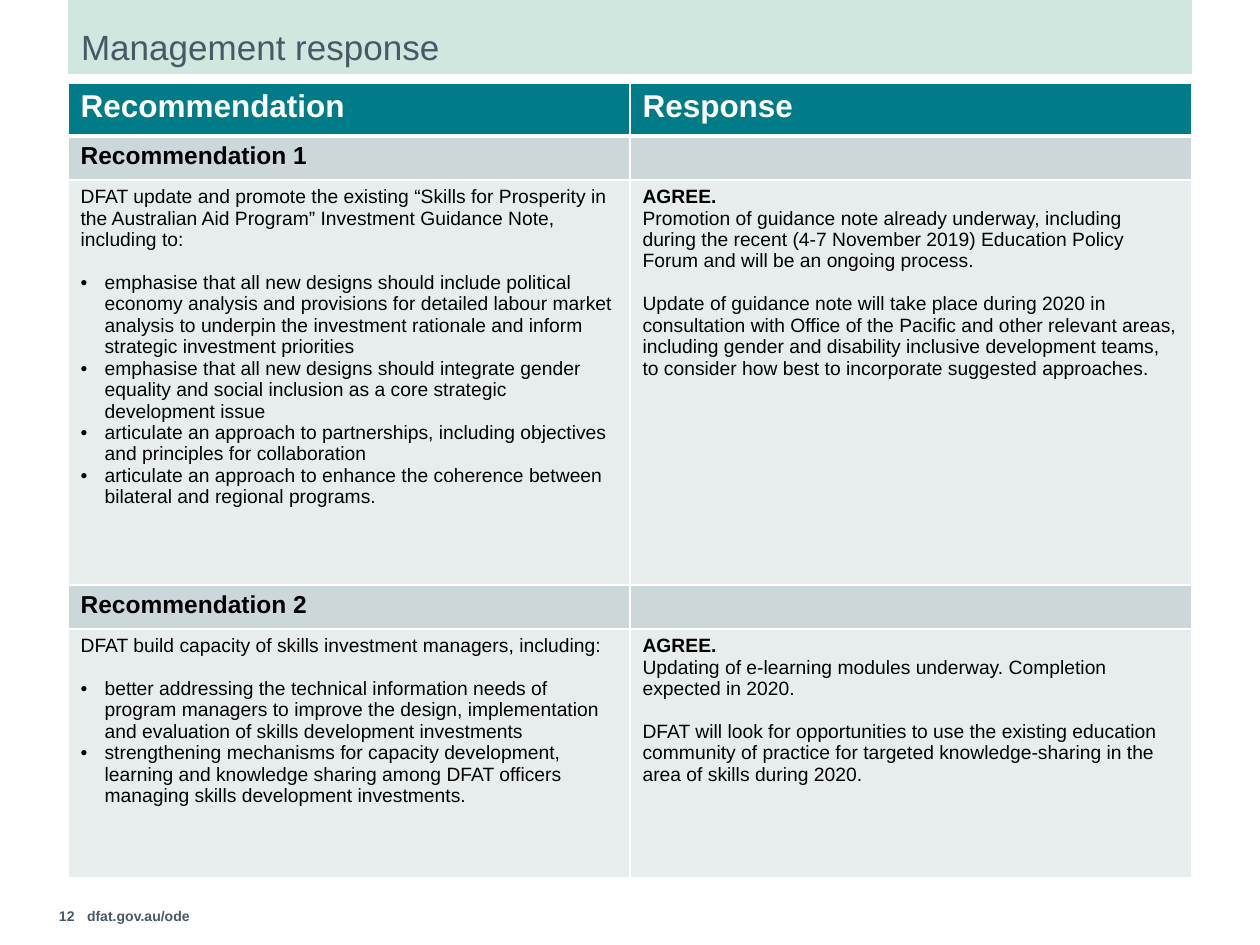
from lxml import etree
from pptx import Presentation
from pptx.dml.color import RGBColor
from pptx.enum import text
from pptx.oxml.ns import qn
from pptx.util import Pt

PX = 914400 // 126
INK, WHITE, BLACK = "485865", "FFFFFF", "000000"
TEAL, MINT, BAND, PALE = "007C89", "D0E7E0", "CCD7DA", "E7ECED"

TITLE = "Management response"
HEADINGS = ["Recommendation", "Response"]
RECOMMENDATIONS = [
    {
        "name": "Recommendation 1",
        "intro": "DFAT update and promote the existing “Skills for Prosperity in the Australian Aid "
                 "Program” Investment Guidance Note, including to:",
        "points": [
            "emphasise that all new designs should include political economy analysis and provisions "
            "for detailed labour market analysis to underpin the investment rationale and inform "
            "strategic investment priorities",
            "emphasise that all new designs should integrate gender equality and social inclusion as "
            "a core strategic development issue",
            "articulate an approach to partnerships, including objectives and principles for "
            "collaboration",
            "articulate an approach to enhance the coherence between bilateral and regional programs.",
        ],
        "verdict": "AGREE.",
        "progress": "Promotion of guidance note already underway, including during the recent "
                    "(4-7 November 2019) Education Policy Forum and will be an ongoing process.",
        "plan": "Update of guidance note will take place during 2020 in consultation with Office of "
                "the Pacific and other relevant areas, including gender and disability inclusive "
                "development teams, to consider how best to incorporate suggested approaches.",
    },
    {
        "name": "Recommendation 2",
        "intro": "DFAT build capacity of skills investment managers, including:",
        "points": [
            "better addressing the technical information needs of program managers to improve the "
            "design, implementation and evaluation of skills development investments",
            "strengthening mechanisms for capacity development, learning and knowledge sharing among "
            "DFAT officers managing skills development investments.",
        ],
        "verdict": "AGREE.",
        "progress": "Updating of e-learning modules underway. Completion expected in 2020.",
        "plan": "DFAT will look for opportunities to use the existing education community of practice "
                "for targeted knowledge-sharing in the area of skills during 2020.",
    },
]
LEFT, WIDTH = 68, 1124
TABLE_TOP, ROW_HEIGHTS = 83, [53, 44, 405, 44, 249]
INDENT, GAP = 24, 12.3


def px(*lengths):
    return [n * PX for n in lengths]


def rgb(colour):
    return RGBColor.from_string(colour)


def write(tf, words, size=11, colour=BLACK, bold=False, align=None, gap=0, bullet=False):
    """Add a paragraph, using the first one while it is still empty."""
    p = tf.paragraphs[0] if not tf.text else tf.add_paragraph()
    p.alignment = align
    p.space_before = Pt(gap)
    if bullet:
        pPr = p._p.get_or_add_pPr()
        pPr.set("marL", str(INDENT * PX))
        pPr.set("indent", str(-INDENT * PX))
        etree.SubElement(pPr, qn("a:buFont")).set("typeface", "Arial")
        etree.SubElement(pPr, qn("a:buChar")).set("char", "•")
    r = p.add_run()
    r.text = words
    r.font.name, r.font.size, r.font.bold = "Arial", Pt(size), bold
    r.font.color.rgb = rgb(colour)
    return p


def style_cell(cell, fill, top=1, bottom=1):
    tcPr = cell._tc.get_or_add_tcPr()
    for side, width in (("L", 1), ("R", 1), ("T", top), ("B", bottom)):
        ln = etree.SubElement(tcPr, qn("a:ln" + side), w=str(Pt(width)))
        line_fill = etree.SubElement(ln, qn("a:solidFill"))
        etree.SubElement(line_fill, qn("a:srgbClr")).set("val", WHITE)
    cell.fill.solid()
    cell.fill.fore_color.rgb = rgb(fill)


def add_label(s, box, words, align=None, left_inset=None):
    tf = s.shapes.add_textbox(*px(*box)).text_frame
    tf.word_wrap = True
    tf.vertical_anchor = text.MSO_ANCHOR.MIDDLE
    if left_inset is not None:
        tf.margin_left = left_inset
    write(tf, words, 8, INK, bold=True, align=align)


def add_title(s):
    sp = s.shapes.title
    sp.left, sp.top, sp.width, sp.height = px(LEFT, 0, WIDTH, 74)
    sp.fill.solid()
    sp.fill.fore_color.rgb = rgb(MINT)
    tf = sp.text_frame
    tf.vertical_anchor = text.MSO_ANCHOR.TOP
    tf.auto_size = text.MSO_AUTO_SIZE.NONE
    tf.margin_left, tf.margin_right, tf.margin_top, tf.margin_bottom = px(13, 13, 30, 30)
    write(tf, TITLE, 20, INK, align=text.PP_ALIGN.LEFT).line_spacing = 0.9


def add_response_table(s):
    box = px(LEFT, TABLE_TOP, WIDTH, sum(ROW_HEIGHTS))
    table = s.shapes.add_table(len(ROW_HEIGHTS), len(HEADINGS), *box).table
    table.first_row = table.horz_banding = False
    for row, height in zip(table.rows, px(*ROW_HEIGHTS)):
        row.height = height
    for col, heading in enumerate(HEADINGS):
        style_cell(table.cell(0, col), TEAL, bottom=3)
        write(table.cell(0, col).text_frame, heading, 18, WHITE, bold=True)

    for i, rec in enumerate(RECOMMENDATIONS):
        name, blank, advice, response = [table.cell(2 * i + 1 + n // 2, n % 2) for n in range(4)]
        for cell in (name, blank):
            style_cell(cell, BAND, top=1 if i else 3)
        for cell in (advice, response):
            style_cell(cell, PALE)
        write(name.text_frame, rec["name"], 14, bold=True)
        # Keeps the empty cell from stretching its row
        blank.text_frame.paragraphs[0]._p.get_or_add_endParaRPr().set("sz", "1400")

        write(advice.text_frame, rec["intro"])
        for n, point in enumerate(rec["points"]):
            write(advice.text_frame, point, bullet=True, gap=0 if n else GAP)
        write(response.text_frame, rec["verdict"], bold=True)
        write(response.text_frame, rec["progress"])
        write(response.text_frame, rec["plan"], gap=GAP)


def main():
    prs = Presentation()
    prs.slide_width, prs.slide_height = px(1260, 945)
    s = prs.slides.add_slide(prs.slide_layouts[5])
    add_title(s)
    add_response_table(s)
    add_label(s, (0, 886, 87, 59), "12", align=text.PP_ALIGN.RIGHT)
    add_label(s, (87, 901, 195, 30), "dfat.gov.au/ode", left_inset=0)
    prs.save("out.pptx")


if __name__ == "__main__":
    main()
